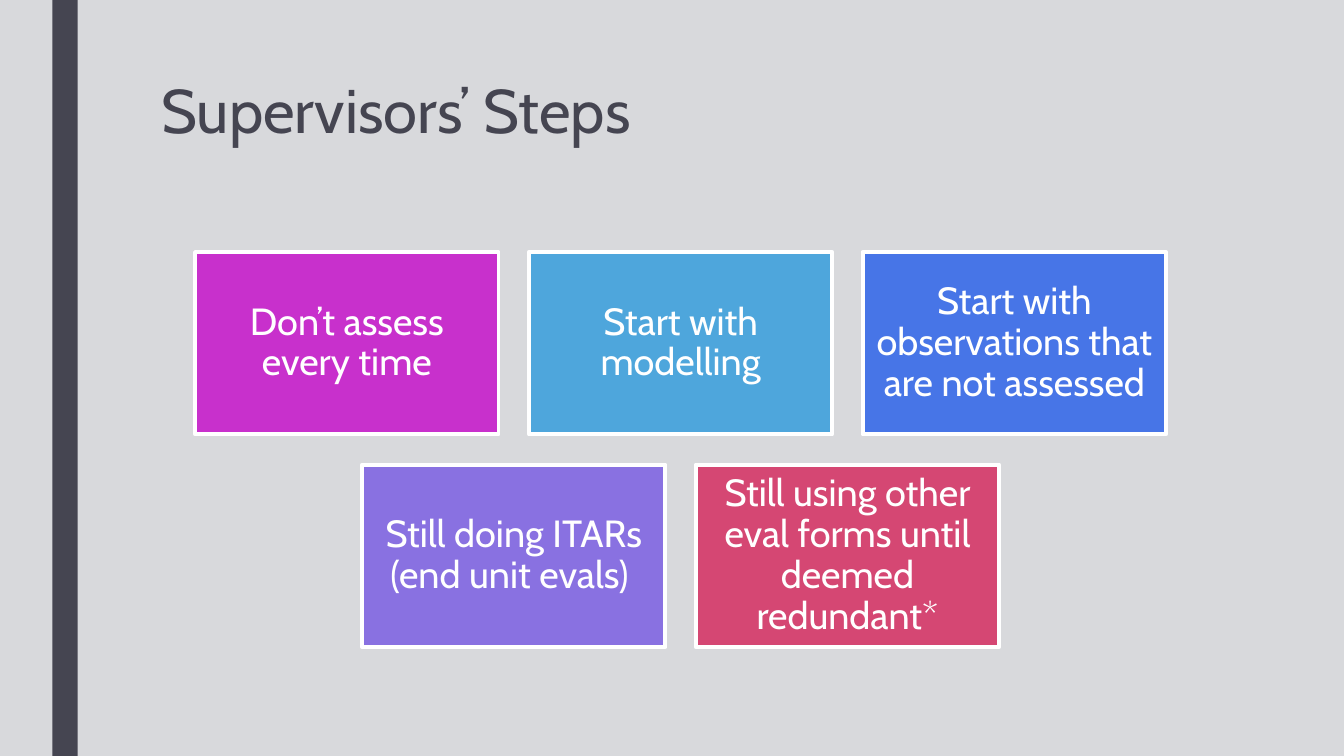
import pptx
import pptx.util
import pptx.dml.color
import pptx.enum.shapes
import pptx.enum.text

Inches, Pt = pptx.util.Inches, pptx.util.Pt
ALIGN, ANCHOR = pptx.enum.text.PP_ALIGN, pptx.enum.text.MSO_ANCHOR


def rgb(value):
    return pptx.dml.color.RGBColor.from_string(value)


class Deck:
    FONT, DARK, WHITE, BACKGROUND = "Cabin", "454551", "FFFFFF", "D8D9DC"

    def __init__(self, prs):
        self.s = prs.slides.add_slide(prs.slide_layouts[6])
        fill = self.s.background.fill
        fill.solid()
        fill.fore_color.rgb = rgb(self.BACKGROUND)

    def add_text(self, sp, text, size, color, align, anchor, inset, spacing):
        tf = sp.text_frame
        tf.word_wrap = True
        tf.vertical_anchor = anchor
        tf.margin_left = tf.margin_right = Inches(inset[0])
        tf.margin_top = tf.margin_bottom = Inches(inset[1])
        p = tf.paragraphs[0]
        p.alignment = align
        p.line_spacing = spacing
        r = p.add_run()
        r.text = text
        r.font.name = self.FONT
        r.font.size = Pt(size)
        r.font.color.rgb = rgb(color)

    def rect(self, x, y, w, h, fill, line=None):
        sp = self.s.shapes.add_shape(
            pptx.enum.shapes.MSO_SHAPE.RECTANGLE,
            Inches(x), Inches(y), Inches(w), Inches(h))
        sp.shadow.inherit = False
        sp.fill.solid()
        sp.fill.fore_color.rgb = rgb(fill)
        if line:
            sp.line.color.rgb = rgb(line)
            sp.line.width = Pt(2.75)
        else:
            sp.line.fill.background()
        return sp

    def title(self, text, x, y, w, h):
        sp = self.s.shapes.add_textbox(Inches(x), Inches(y), Inches(w), Inches(h))
        self.add_text(sp, text, 44, self.DARK, ALIGN.LEFT, ANCHOR.TOP, (0.1, 0.05), 0.89)

    def card(self, text, x, y, w, h, fill):
        sp = self.rect(x, y, w, h, fill, self.WHITE)
        self.add_text(sp, text, 27, self.WHITE, ALIGN.CENTER, ANCHOR.MIDDLE, (0.11, 0.11), 0.9)


def main():
    prs = pptx.Presentation()
    prs.slide_width, prs.slide_height = Inches(13.33), Inches(7.5)
    deck = Deck(prs)

    # Side bar and title
    deck.rect(0.52, 0, 0.25, 7.5, Deck.DARK)
    deck.title("Supervisors’ Steps", 1.5, 0.75, 10.5, 1.62)

    # Rows of cards, each centred on the same axis
    rows = [
        [("Don’t assess every time", "C830CC"),
         ("Start with modelling", "4EA6DC"),
         ("Start with observations that are not assessed", "4775E7")],
        [("Still doing ITARs (end unit evals) ", "8971E1"),
         ("Still using other eval forms until deemed redundant*", "D54773")],
    ]
    center, top, w, h, gap = 6.75, 2.5, 3.01, 1.81, 0.3
    for i, row in enumerate(rows):
        left = center - (len(row) * (w + gap) - gap) / 2
        for j, (text, fill) in enumerate(row):
            deck.card(text, left + j * (w + gap), top + i * (h + gap), w, h, fill)

    prs.save("out.pptx")


if __name__ == "__main__":
    main()
